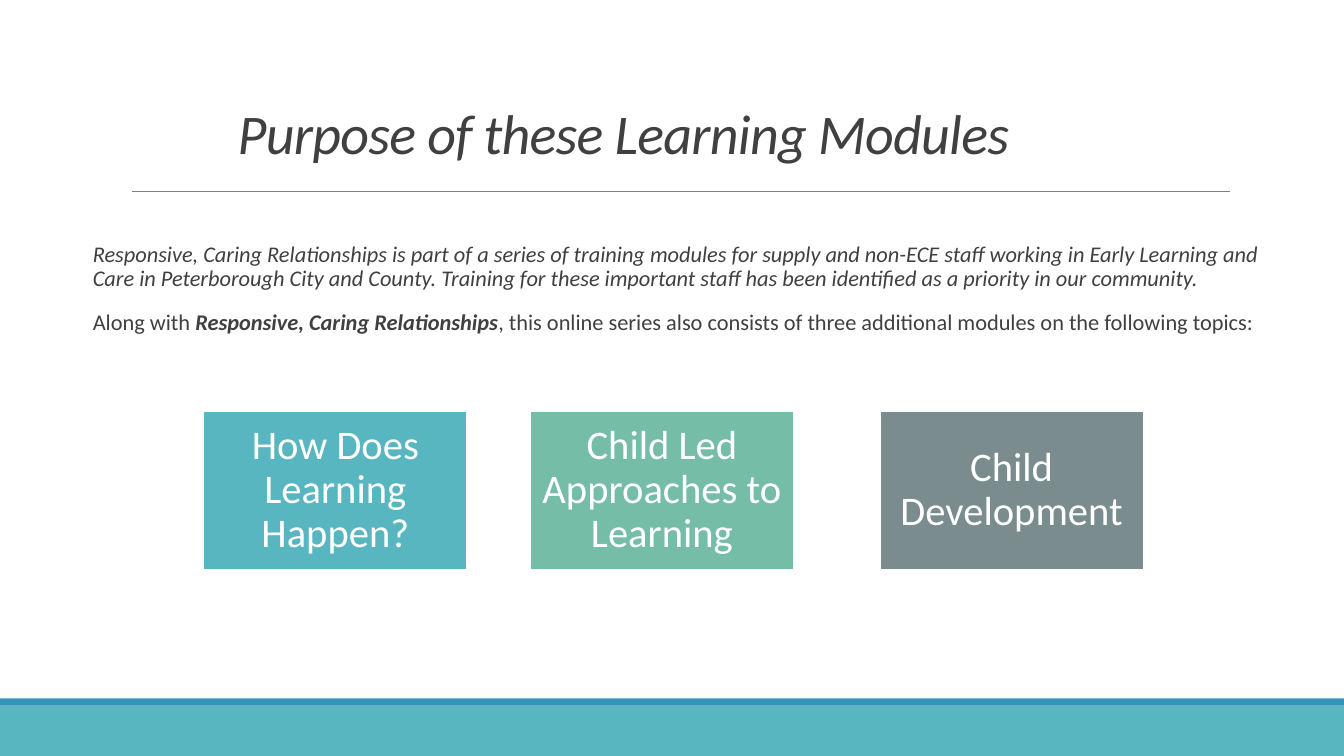
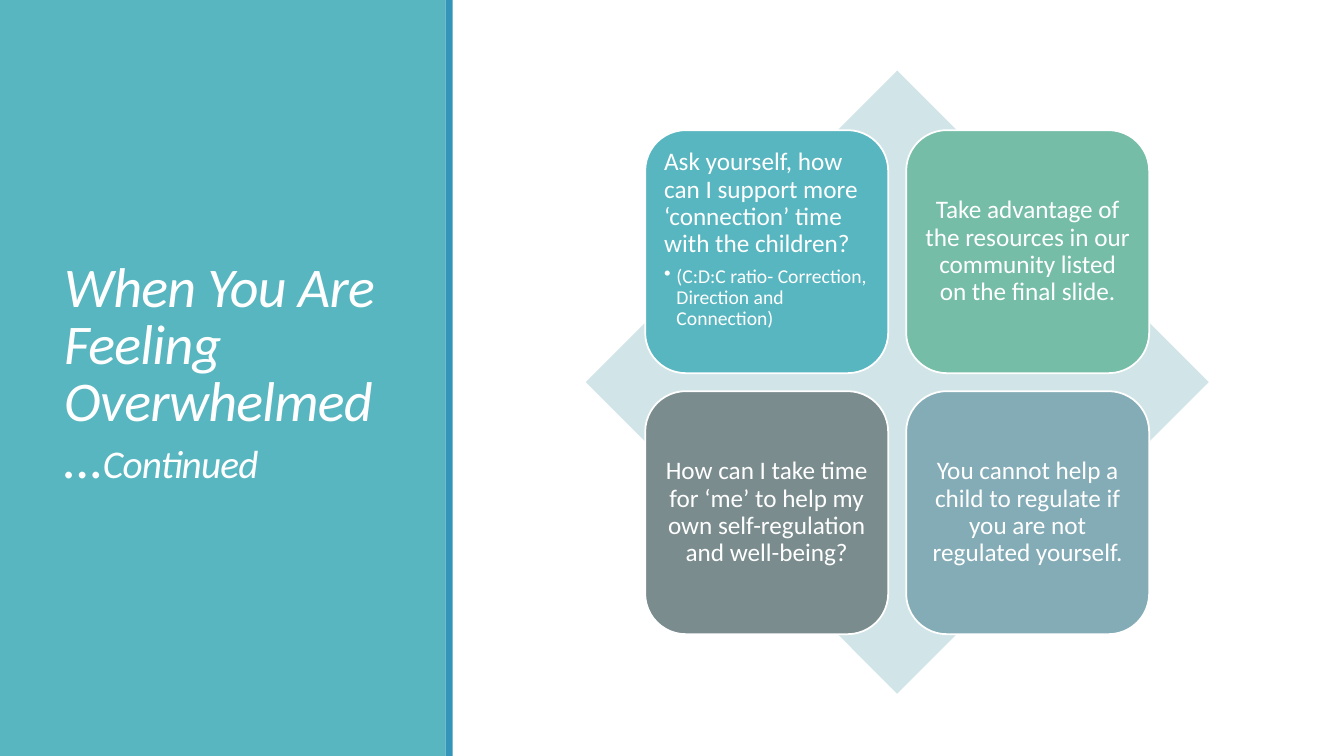
from dataclasses import dataclass
from typing import NamedTuple

from lxml import etree
from pptx import Presentation
from pptx.dml.color import RGBColor
from pptx.enum import shapes, text
from pptx.oxml import ns
from pptx.util import Cm, Pt


@dataclass(frozen=True)
class Theme:
    font: str = "Calibri"
    teal: str = "58B6C0"
    blue: str = "3494BA"
    green: str = "75BDA7"
    slate: str = "7A8C8E"
    steel: str = "84ACB6"
    pale: str = "D1E5E8"
    ink: str = "404040"
    rule: str = "808080"
    white: str = "FFFFFF"
    title: int = 40
    subtitle: int = 28
    module: int = 29
    card: int = 18
    body: int = 16
    detail: int = 14


THEME = Theme()
SHAPE = shapes.MSO_SHAPE
ANCHOR = text.MSO_ANCHOR
ALIGN = text.PP_ALIGN


class Box(NamedTuple):
    """A region in centimetres."""
    left: float
    top: float
    width: float
    height: float

    def lengths(self):
        return [Cm(value) for value in self]

    def inside(self, left, top, width, height):
        return Box(self.left + left, self.top + top, width, height)


PAGE = Box(0, 0, 33.87, 19.05)
EDGE = 0.18


def write(frame, paragraphs, *, size, color=THEME.white, italic=False, tracking=None,
          align=ALIGN.LEFT, anchor=ANCHOR.TOP, spacing=0.9, before=0, after=0,
          insets=(0.25, 0.13)):
    """Fill a frame; a paragraph is a list of (text, overrides) runs."""
    frame.word_wrap = True
    frame.vertical_anchor = anchor
    frame.margin_left = frame.margin_right = Cm(insets[0])
    frame.margin_top = frame.margin_bottom = Cm(insets[1])
    for index, runs in enumerate(paragraphs):
        paragraph = frame.add_paragraph() if index else frame.paragraphs[0]
        paragraph.alignment = align
        paragraph.line_spacing = spacing
        paragraph.space_before = Pt(before if index else 0)
        paragraph.space_after = Pt(after)
        for words, overrides in runs:
            style = {"size": size, "italic": italic, "bold": False, **overrides}
            run = paragraph.add_run()
            run.text = words
            run.font.name = THEME.font
            run.font.size = Pt(style["size"])
            run.font.italic = style["italic"]
            run.font.bold = style["bold"]
            run.font.color.rgb = RGBColor.from_string(color)
            if tracking is not None:
                run.font._element.set("spc", str(int(tracking * 100)))


def add_text(slide, box, paragraphs, **style):
    write(slide.shapes.add_textbox(*box.lengths()).text_frame, paragraphs, **style)


def add_title(slide, box, runs, **style):
    add_text(slide, box, [runs], size=THEME.title, italic=True, tracking=-0.5,
             spacing=0.85, **style)


def add_block(slide, box, fill, kind=SHAPE.RECTANGLE, outlined=False):
    block = slide.shapes.add_shape(kind, *box.lengths())
    block.shadow.inherit = False
    block.fill.solid()
    block.fill.fore_color.rgb = RGBColor.from_string(fill)
    if outlined:
        block.line.color.rgb = RGBColor.from_string(THEME.white)
        block.line.width = Pt(1.25)
    else:
        block.line.fill.background()
    return block


def add_band(slide, band, edge):
    add_block(slide, band, THEME.teal)
    add_block(slide, edge, THEME.blue)


def add_rule(slide, left, right, y):
    rule = slide.shapes.add_connector(shapes.MSO_CONNECTOR.STRAIGHT,
                                      Cm(left), Cm(y), Cm(right), Cm(y))
    rule.line.color.rgb = RGBColor.from_string(THEME.rule)
    rule.line.width = Pt(0.5)
    etree.SubElement(rule._element.spPr, ns.qn("a:effectLst"))


def add_bullet(paragraph, indent):
    properties = paragraph._p.get_or_add_pPr()
    properties.set("marL", str(Cm(indent)))
    properties.set("indent", str(-Cm(indent)))
    etree.SubElement(properties, ns.qn("a:buChar")).set("char", "•")


def add_modules(slide, area, modules):
    """Place each module at its own offset along the row."""
    for offset, name, fill in modules:
        module = add_block(slide, area.inside(offset, 0, 6.65, area.height), fill,
                           outlined=True)
        write(module.text_frame, [[(name, {})]], size=THEME.module,
              align=ALIGN.CENTER, anchor=ANCHOR.MIDDLE, insets=(0.3, 0.3))


def add_matrix(slide, area, cards):
    """Set four cards, two by two, over a diamond that fills the area."""
    add_block(slide, area, THEME.pale, SHAPE.DIAMOND)
    margin, side = 1.5, area.width * 0.39
    pitch = area.width - 2 * margin - side
    for index, (paragraphs, fill) in enumerate(cards):
        row, column = divmod(index, 2)
        box = area.inside(margin + column * pitch, margin + row * pitch, side, side)
        frame = add_block(slide, box, fill, SHAPE.ROUNDED_RECTANGLE, True).text_frame
        has_detail = len(paragraphs) > 1
        write(frame, paragraphs, size=THEME.card, insets=(0.18, 0.18),
              after=6 if has_detail else 0,
              align=ALIGN.LEFT if has_detail else ALIGN.CENTER,
              anchor=ANCHOR.TOP if has_detail else ANCHOR.MIDDLE)
        for detail in frame.paragraphs[1:]:
            add_bullet(detail, 0.31)


def purpose_slide(slide, page):
    footer = page.inside(0, 17.78, page.width, 1.27)
    add_band(slide, footer, footer.inside(0, -EDGE, page.width, EDGE))
    add_rule(slide, 3.33, 31, 4.82)
    add_title(slide, page.inside(5.74, 1.6, 24.77, 2.72),
              [("Purpose of these Learning Modules", {})],
              color=THEME.ink, anchor=ANCHOR.BOTTOM)
    add_text(slide, page.inside(2.34, 6, 29.62, 3), [
        [("Responsive, Caring Relationships is part of a series of training modules "
          "for supply and non-ECE staff working in Early Learning and Care in "
          "Peterborough City and County. Training for these important staff has been "
          "identified as a priority in our community.", {"italic": True})],
        [("Along with ", {}),
         ("Responsive, Caring Relationships", {"bold": True, "italic": True}),
         (", this online series also consists of three additional modules on the "
          "following topics:", {})],
    ], size=THEME.body, color=THEME.ink, before=12, after=2, insets=(0, 0.13))
    add_modules(slide, page.inside(5.13, 10.36, 23.69, 3.99), [
        (0, "How Does Learning Happen?", THEME.teal),
        (8.23, "Child Led Approaches to Learning", THEME.green),
        (17.04, "Child Development", THEME.slate),
    ])


def overwhelmed_slide(slide, page):
    panel = page.inside(0, 0, 11.23, page.height)
    add_band(slide, panel, panel.inside(panel.width, 0, EDGE, page.height))
    add_title(slide, panel.inside(1.37, 1.45, 8.56, 16.03),
              [("When You Are Feeling Overwhelmed…", {}),
               ("Continued", {"size": THEME.subtitle})], anchor=ANCHOR.MIDDLE)
    add_matrix(slide, page.inside(14.76, 1.78, 15.7, 15.7), [
        ([[("Ask yourself, how can I support more ‘connection’ time with the "
            "children?", {})],
          [("(C:D:C ratio- Correction, Direction and Connection)",
            {"size": THEME.detail})]], THEME.teal),
        ([[("Take advantage of the resources in our community listed on the final "
            "slide.", {})]], THEME.green),
        ([[("How can I take time for ‘me’ to help my own self-regulation and "
            "well-being?", {})]], THEME.slate),
        ([[("You cannot help a child to regulate if you are not regulated "
            "yourself.", {})]], THEME.steel),
    ])


def main():
    deck = Presentation()
    deck.slide_width, deck.slide_height = Cm(PAGE.width), Cm(PAGE.height)
    for build in (purpose_slide, overwhelmed_slide):
        build(deck.slides.add_slide(deck.slide_layouts[6]), PAGE)
    deck.save("out.pptx")


if __name__ == "__main__":
    main()
